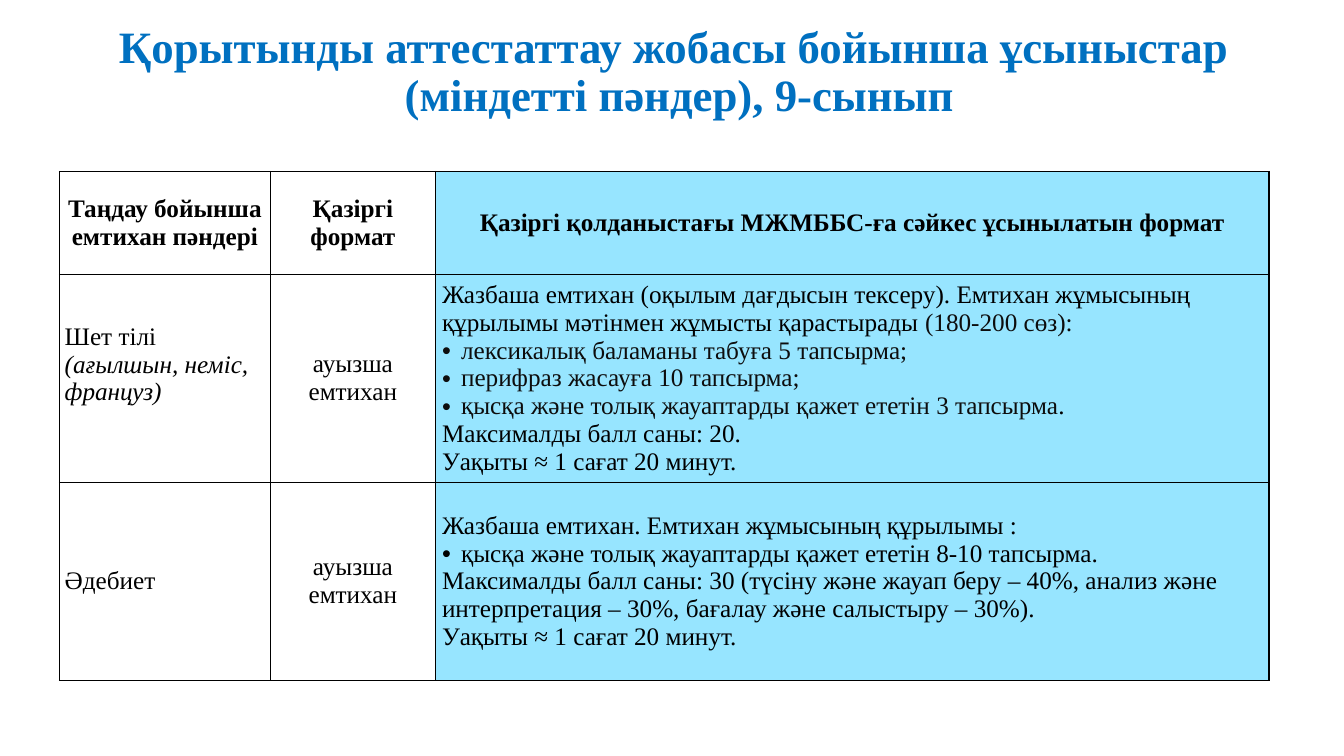
"""Build a slide with a table of proposed exam formats for grade 9."""
from dataclasses import dataclass

from lxml.etree import SubElement
from pptx import Presentation
from pptx.dml.color import RGBColor
from pptx.enum.text import MSO_ANCHOR, PP_ALIGN
from pptx.oxml.ns import qn
from pptx.util import Cm, Pt

FONT = "Times New Roman"
COLORS = {"title": "0070C0", "text": "000000", "soft": "0D0D0D",
          "border": "000000", "proposed": "97E5FF"}
COLUMNS = (5.31, 4.17, 21.0)
ROWS = (2.6, 5.23, 5.0)


@dataclass(frozen=True)
class Span:
    text: str
    color: str = "text"
    bold: bool = False
    italic: bool = False
    size: int = 18


@dataclass(frozen=True)
class Para:
    spans: tuple[Span, ...]
    centered: bool = False
    bullet: bool = False


@dataclass(frozen=True)
class CellText:
    paras: tuple[Para, ...]
    fill: str | None = None
    side: float = 0.16
    bottom: float = 0


def line(text: str, color: str = "text") -> Para:
    return Para((Span(text, color),))


def item(*spans: Span) -> Para:
    return Para(spans, bullet=True)


def header(text: str, fill: str | None = None) -> CellText:
    return CellText((Para((Span(text, bold=True),), centered=True),), fill)


def subject(*spans: Span, bottom: float = 0) -> CellText:
    return CellText((Para(spans),), side=0.13, bottom=bottom)


def proposal(*paras: Para) -> CellText:
    return CellText(paras, "proposed")


ORAL = CellText((Para((Span("ауызша емтихан"),), centered=True),))
DURATION = line("Уақыты ≈ 1 сағат 20 минут.")
TITLE = Para((Span("Қорытынды аттестаттау жобасы бойынша ұсыныстар \n"
                   "(міндетті пәндер), 9-сынып", "title", bold=True, size=32),), centered=True)
TABLE = (
    (header("Таңдау бойынша емтихан пәндері"), header("Қазіргі формат"),
     header("Қазіргі қолданыстағы МЖМББС-ға сәйкес ұсынылатын формат", "proposed")),
    (subject(Span("Шет тілі "), Span("(ағылшын, неміс, француз)", italic=True), bottom=0.7),
     ORAL,
     proposal(
         Para((Span("Жазбаша емтихан (оқылым дағдысын тексеру). Емтихан жұмысының "
                    "құрылымы мәтінмен жұмысты қарастырады "),
               Span("(180-200 сөз):", "soft"))),
         item(Span("лексикалық баламаны табуға 5 тапсырма;", "soft")),
         item(Span("перифраз жасауға 10 тапсырма;", "soft")),
         item(Span("қысқа және толық жауаптарды қажет ететін 3 тапсырма", "soft"), Span(".")),
         line("Максималды балл саны: 20."),
         DURATION)),
    (subject(Span("Әдебиет")),
     ORAL,
     proposal(
         line("Жазбаша емтихан. Емтихан жұмысының құрылымы :"),
         item(Span("қысқа және толық жауаптарды қажет ететін 8-10 тапсырма.")),
         line("Максималды балл саны: 30 (түсіну және жауап беру – 40%, анализ және "
              "интерпретация – 30%, бағалау және салыстыру – 30%)."),
         DURATION)),
)


def rgb(name: str) -> RGBColor:
    return RGBColor.from_string(COLORS[name])


def write_para(p, para: Para) -> None:
    p.alignment = PP_ALIGN.CENTER if para.centered else PP_ALIGN.LEFT
    if para.bullet:
        pPr = p._p.get_or_add_pPr()
        pPr.set("marL", str(Cm(0.48)))
        pPr.set("indent", str(-Cm(0.48)))
        SubElement(pPr, qn("a:buFont"), typeface="Arial")
        SubElement(pPr, qn("a:buChar"), char="•")
    for span in para.spans:
        if len(para.spans) == 1:
            p.text = span.text
        else:
            p.add_run().text = span.text
        runs = p.runs if len(para.spans) == 1 else p.runs[-1:]
        for r in runs:
            r.font.name = FONT
            r.font.size = Pt(span.size)
            r.font.bold = span.bold
            r.font.italic = span.italic
            r.font.color.rgb = rgb(span.color)


def draw_borders(cell) -> None:
    tcPr = cell._tc.get_or_add_tcPr()
    for side in ("lnL", "lnR", "lnT", "lnB"):
        ln = SubElement(tcPr, qn(f"a:{side}"), w=str(Pt(1)))
        fill = SubElement(ln, qn("a:solidFill"))
        SubElement(fill, qn("a:srgbClr"), val=COLORS["border"])


def fill_cell(cell, content: CellText) -> None:
    cell.vertical_anchor = MSO_ANCHOR.MIDDLE
    cell.margin_left = cell.margin_right = Cm(content.side)
    cell.margin_top = 0
    cell.margin_bottom = Cm(content.bottom)
    draw_borders(cell)
    if content.fill:
        cell.fill.solid()
        cell.fill.fore_color.rgb = rgb(content.fill)
    else:
        cell.fill.background()
    tf = cell.text_frame
    for i, para in enumerate(content.paras):
        write_para(tf.add_paragraph() if i else tf.paragraphs[0], para)


def add_title(s) -> None:
    tf = s.shapes.add_textbox(Cm(1.2), Cm(0.5), Cm(31.85), Cm(1.55)).text_frame
    tf.word_wrap = True
    p = tf.paragraphs[0]
    write_para(p, TITLE)
    p.line_spacing = 0.9


def add_exam_table(s) -> None:
    frame = s.shapes.add_table(len(ROWS), len(COLUMNS), Cm(1.5), Cm(4.32),
                               Cm(sum(COLUMNS)), Cm(sum(ROWS)))
    table = frame.table
    table.first_row = table.horz_banding = False
    for column, width in zip(table.columns, COLUMNS):
        column.width = Cm(width)
    for row, height, contents in zip(table.rows, ROWS, TABLE):
        row.height = Cm(height)
        for cell, content in zip(row.cells, contents):
            fill_cell(cell, content)


def main() -> None:
    prs = Presentation()
    prs.slide_width, prs.slide_height = Cm(33.87), Cm(19.05)
    s = prs.slides.add_slide(prs.slide_layouts[6])
    add_exam_table(s)
    add_title(s)
    prs.save("out.pptx")


if __name__ == "__main__":
    main()
